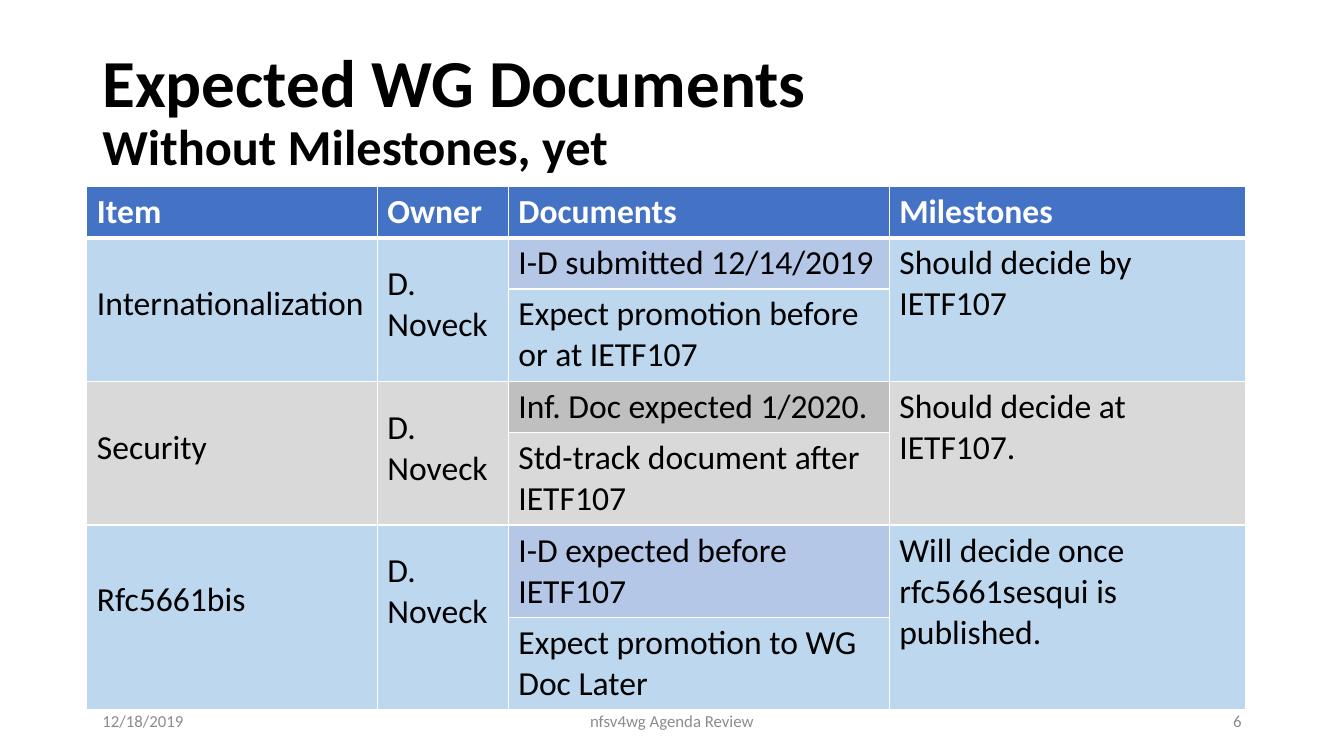
import pptx
import pptx.util
import pptx.dml.color
import pptx.enum.text
import pptx.oxml
import pptx.oxml.ns

Cm = pptx.util.Cm
Pt = pptx.util.Pt
RGBColor = pptx.dml.color.RGBColor
Align = pptx.enum.text.PP_ALIGN
Anchor = pptx.enum.text.MSO_ANCHOR

BLACK = RGBColor(0x00, 0x00, 0x00)
WHITE = RGBColor(0xFF, 0xFF, 0xFF)
GREY = RGBColor(0x8C, 0x8C, 0x8C)
HEADER_BLUE = RGBColor(0x44, 0x72, 0xC4)
PALE_BLUE = RGBColor(0xBD, 0xD7, 0xEE)
MID_BLUE = RGBColor(0xB4, 0xC7, 0xE7)
PALE_GREY = RGBColor(0xD9, 0xD9, 0xD9)
MID_GREY = RGBColor(0xBF, 0xBF, 0xBF)

HEADINGS = ["Item", "Owner", "Documents", "Milestones"]
ITEMS = [
    ("Internationalization", "D. Noveck", "I-D submitted 12/14/2019",
     "Expect promotion before or at IETF107",
     "Should decide by IETF107", PALE_BLUE, MID_BLUE, 1.16),
    ("Security", "D. Noveck", "Inf. Doc expected 1/2020.",
     "Std-track document after IETF107",
     "Should decide at IETF107.", PALE_GREY, MID_GREY, 1.16),
    ("Rfc5661bis", "D. Noveck", "I-D expected before IETF107",
     "Expect promotion to WG Doc Later",
     "Will decide once rfc5661sesqui is published.", PALE_BLUE, MID_BLUE, 1.37),
]
COLUMN_WIDTHS = [7.32, 3.3, 9.6, 8.99]
ROW_HEIGHTS = [1.29, 1.29, 2.33, 1.29, 2.33, 2.33, 2.33]
CELL_MARGIN = 0.13
OWNER_MARGIN = 0.65


class SlideBuilder:
    font_name = "Calibri"

    def __init__(self, page):
        self.page = page

    def style(self, para, size, color, bold=False):
        para.font.name = self.font_name
        para.font.size = Pt(size)
        para.font.color.rgb = color
        para.font.bold = bold

    def text_box(self, left, top, width, height):
        box = self.page.shapes.add_textbox(Cm(left), Cm(top), Cm(width), Cm(height))
        box.text_frame.word_wrap = True
        box.text_frame.vertical_anchor = Anchor.MIDDLE
        return box.text_frame.paragraphs[0]

    def title(self, heading, subheading):
        para = self.text_box(2.33, 1.01, 29.21, 3.68)
        para.line_spacing = 0.9
        self.style(para, 48, BLACK, True)
        para.add_run().text = heading
        para.add_line_break()
        span = para.add_run()
        span.text = subheading
        span.font.size = Pt(36)

    def footer(self, text, left, width, alignment):
        para = self.text_box(left, 17.65, width, 1.01)
        para.text = text
        para.alignment = alignment
        self.style(para, 12, GREY)

    def borders(self, cell, top, bottom):
        properties = cell._tc.get_or_add_tcPr()
        for side, width in (("L", 1), ("R", 1), ("T", top), ("B", bottom)):
            properties.append(pptx.oxml.parse_xml(
                f'<a:ln{side} {pptx.oxml.ns.nsdecls("a")} w="{Pt(width)}">'
                f'<a:solidFill><a:srgbClr val="{WHITE}"/></a:solidFill></a:ln{side}>'))

    def cell(self, cell, text, fill, color=BLACK, bold=False, margin=CELL_MARGIN):
        cell.fill.solid()
        cell.fill.fore_color.rgb = fill
        cell.margin_top = Cm(margin)
        para = cell.text_frame.paragraphs[0]
        para.text = text
        self.style(para, 24, color, bold)

    def table(self, left, top):
        frame = self.page.shapes.add_table(
            len(ROW_HEIGHTS), len(COLUMN_WIDTHS), Cm(left), Cm(top),
            Cm(sum(COLUMN_WIDTHS)), Cm(sum(ROW_HEIGHTS)))
        grid = frame.table
        grid.horz_banding = False
        for column, width in zip(grid.columns, COLUMN_WIDTHS):
            column.width = Cm(width)
        for index, height in enumerate(ROW_HEIGHTS):
            grid.rows[index].height = Cm(height)
            for cell in grid.rows[index].cells:
                self.borders(cell, 3 if index == 1 else 1, 3 if index == 0 else 1)
        for column, heading in enumerate(HEADINGS):
            self.cell(grid.cell(0, column), heading, HEADER_BLUE, WHITE, True)
        for index, item in enumerate(ITEMS):
            name, owner, first, second, milestone, fill, accent, margin = item
            row = 1 + 2 * index
            for column in (0, 1, 3):
                grid.cell(row, column).merge(grid.cell(row + 1, column))
            self.cell(grid.cell(row, 0), name, fill, margin=margin)
            self.cell(grid.cell(row, 1), owner, fill, margin=OWNER_MARGIN)
            self.cell(grid.cell(row, 2), first, accent)
            self.cell(grid.cell(row + 1, 2), second, fill)
            self.cell(grid.cell(row, 3), milestone, fill)


def main():
    deck = pptx.Presentation()
    deck.slide_width = Cm(33.87)
    deck.slide_height = Cm(19.05)
    builder = SlideBuilder(deck.slides.add_slide(deck.slide_layouts[6]))
    builder.title("Expected WG Documents", "Without Milestones, yet")
    builder.table(2.19, 4.7)
    builder.footer("12/18/2019", 2.33, 7.62, Align.LEFT)
    builder.footer("nfsv4wg Agenda Review", 11.22, 11.43, Align.CENTER)
    builder.footer("6", 23.92, 7.62, Align.RIGHT)
    deck.save("out.pptx")


if __name__ == "__main__":
    main()
